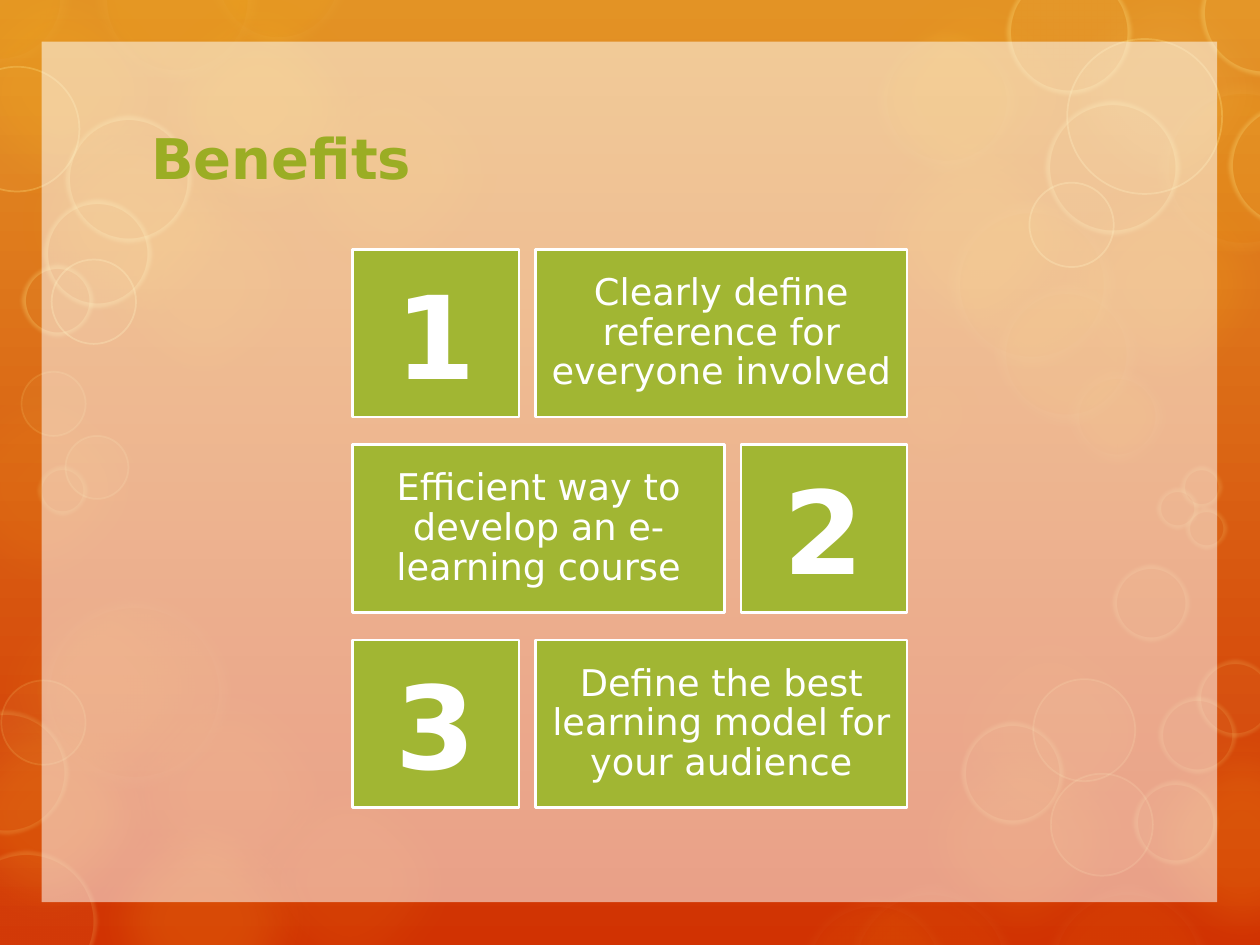
from pptx import Presentation
from pptx.dml.color import RGBColor
from pptx.enum.shapes import MSO_SHAPE
from pptx.enum.text import MSO_ANCHOR, PP_ALIGN
from pptx.oxml.ns import qn
from pptx.util import Inches, Pt
from lxml.etree import SubElement

COLUMNS, ROWS = 10, 7.5
FONT = "DejaVu Sans"
ORANGE = RGBColor(0xE3, 0x93, 0x25)
RED = RGBColor(0xD1, 0x32, 0x02)
GOLD = RGBColor(0xFD, 0xC6, 0x1B)
YELLOW = RGBColor(0xFF, 0xE2, 0x81)
CREAM = RGBColor(0xFE, 0xEB, 0xAE)
WHITE = RGBColor(0xFF, 0xFF, 0xFF)
GREEN = RGBColor(0xA1, 0xB6, 0x33)
TITLE_GREEN = RGBColor(0x9B, 0xAD, 0x24)

# Fill, line colour, line width and soft edge in points
GLOW = (GOLD, None, 0, 25)
PALE_GLOW = (YELLOW, None, 0, 25)
HALO = (GOLD, CREAM, 14, 10)
MIST = (YELLOW, YELLOW, 5, 2.5)
RING = (YELLOW, YELLOW, 1, 0)

# Style, fill opacity, line opacity, then column, row and diameter of each
BUBBLES = [
    (GLOW, 8, 0, [(-0.25, 4.42, 2.09), (0.77, 5.24, 2.09), (1.73, 5.96, 2.09),
                  (-0.7, 2.82, 2.09)]),
    (GLOW, 10, 0, [(0.57, 1.2, 2.09), (2.05, 0.31, 2.09), (6.69, -0.29, 2.09),
                   (7.06, 5.62, 2.09), (6.75, 2.62, 1.33)]),
    (GLOW, 16, 0, [(0.57, 6.27, 2.09), (8.81, 5.62, 2.09), (-0.68, 5.41, 2.09)]),
    (GLOW, 14, 0, [(-0.56, -0.32, 2.09)]),
    (GLOW, 20, 0, [(1.01, -0.18, 2.09)]),
    (GLOW, 15, 0, [(0, 0.72, 2.09), (8.2, 1.2, 2.09), (6.69, 0.86, 2.09)]),
    (GLOW, 5, 0, [(7.29, 4.77, 2.09)]),
    (PALE_GLOW, 10, 0, [(8.2, -0.32, 2.09)]),
    (HALO, 10, 6, [(9.18, 0.65, 1.37), (6.94, 0.23, 1.14), (7.52, 1.59, 1.33),
                   (7.89, 2.24, 1.14), (8.47, 2.91, 0.79), (0.75, -0.66, 1.31),
                   (1.64, -0.75, 1.14), (-0.57, -0.58, 1.14)]),
    (HALO, 6, 4, [(0.3, 4.73, 1.53), (6.32, 7.1, 1.24), (6.7, 7.01, 1.37),
                  (8.28, 7.01, 1.34)]),
    (MIST, 5, 15, [(-0.35, 6.75, 1.12), (-0.44, 5.64, 0.98), (7.63, 5.73, 0.81),
                   (9, 6.2, 0.66), (8.83, 4.48, 0.61), (9.2, 5.53, 0.61),
                   (9.5, 5.24, 0.61), (9.37, 3.7, 0.33), (9.18, 3.87, 0.33),
                   (9.41, 4.03, 0.33), (0.3, 3.7, 0.39)]),
    (MIST, 5, 30, [(0.52, 0.92, 1), (0.35, 1.59, 0.85), (0.17, 2.1, 0.57),
                   (7.99, -0.24, 0.99), (9.53, -0.39, 0.99), (9.75, 0.82, 0.99),
                   (8.3, 0.8, 1.06)]),
    (RING, 5, 15, [(0.01, 5.4, 0.67), (8.34, 6.14, 0.81), (8.2, 5.39, 0.81),
                   (0.17, 2.95, 0.51), (0.52, 3.46, 0.5)]),
    (RING, 5, 30, [(-0.36, 0.53, 0.99), (0.41, 2.06, 0.67), (8.47, 0.31, 1.23),
                   (8.17, 1.45, 0.67)]),
]

BENEFITS = [
    "Clearly define reference for everyone involved",
    "Efficient way to develop an e-learning course",
    "Define the best learning model for your audience",
]
LEFT, TOP, WIDTH = 2.8, 1.98, 4.4
TILE_HEIGHT, ROW_STEP = 1.33, 1.55
NUMBER_WIDTH, TEXT_WIDTH = 1.32, 2.95


def set_opacity(parent, percent):
    color = parent.find(qn("a:solidFill")).find(qn("a:srgbClr"))
    SubElement(color, qn("a:alpha")).set("val", str(percent * 1000))


class Deck:
    """Holds the style and the slide; lengths are columns and rows of one inch."""

    def __init__(self):
        self.prs = Presentation()
        self.prs.slide_width = Inches(COLUMNS)
        self.prs.slide_height = Inches(ROWS)
        self.s = self.prs.slides.add_slide(self.prs.slide_layouts[5])

    def background(self, top, bottom):
        fill = self.s.background.fill
        fill.gradient()
        fill.gradient_angle = 270
        for stop, color in zip(fill.gradient_stops, (top, bottom)):
            stop.color.rgb = color

    def shape(self, kind, box, fill, opacity=100, line=None, width=0):
        sp = self.s.shapes.add_shape(kind, *map(Inches, box))
        sp.shadow.inherit = False
        sp.fill.solid()
        sp.fill.fore_color.rgb = fill
        if opacity < 100:
            set_opacity(sp.element.spPr, opacity)
        if line is None:
            sp.line.fill.background()
        else:
            sp.line.color.rgb = line
            sp.line.width = Pt(width)
        return sp

    def bubble(self, style, opacity, line_opacity, col, row, size):
        fill, line, width, blur = style
        sp = self.shape(MSO_SHAPE.OVAL, (col, row, size, size), fill, opacity,
                        line, width)
        spPr = sp.element.spPr
        if line is not None:
            set_opacity(spPr.find(qn("a:ln")), line_opacity)
        if blur:
            edge = SubElement(spPr.find(qn("a:effectLst")), qn("a:softEdge"))
            edge.set("rad", str(Pt(blur)))

    def add_text(self, tf, text, size, color, align, bold=False):
        tf.word_wrap = True
        tf.vertical_anchor = MSO_ANCHOR.MIDDLE
        p = tf.paragraphs[0]
        p.alignment = align
        r = p.add_run()
        r.text = text
        r.font.name = FONT
        r.font.size = Pt(size)
        r.font.bold = bold
        r.font.color.rgb = color
        return p

    def title(self, text, box):
        sp = self.s.shapes.title
        sp.left, sp.top, sp.width, sp.height = map(Inches, box)
        self.add_text(sp.text_frame, text, 32, TITLE_GREEN, PP_ALIGN.LEFT, True)
        self.s.shapes.element.append(sp.element)  # in front of the panel

    def tile(self, box, text, size, bold=False):
        sp = self.shape(MSO_SHAPE.RECTANGLE, box, GREEN, line=WHITE, width=1.5)
        tf = sp.text_frame
        tf.margin_left = tf.margin_right = Inches(0.09)
        tf.margin_top = tf.margin_bottom = Inches(0.09)
        return self.add_text(tf, text, size, WHITE, PP_ALIGN.CENTER, bold)

    def benefit(self, index, text):
        """Number and text swap sides on every other row."""
        row = TOP + index * ROW_STEP
        number_col, text_col = LEFT, LEFT + WIDTH - TEXT_WIDTH
        if index % 2:
            number_col, text_col = LEFT + WIDTH - NUMBER_WIDTH, LEFT
        p = self.tile((text_col, row, TEXT_WIDTH, TILE_HEIGHT), text, 21)
        p.line_spacing = 0.9
        self.tile((number_col, row, NUMBER_WIDTH, TILE_HEIGHT),
                  str(index + 1), 66, bold=True)


def main():
    deck = Deck()
    deck.background(ORANGE, RED)
    for style, opacity, line_opacity, places in BUBBLES:
        for place in places:
            deck.bubble(style, opacity, line_opacity, *place)
    deck.shape(MSO_SHAPE.RECTANGLE, (0.33, 0.33, 9.33, 6.83), WHITE, 53)
    deck.title("Benefits", (1.1, 0.74, 7.79, 1.01))
    for index, text in enumerate(BENEFITS):
        deck.benefit(index, text)
    deck.prs.save("out.pptx")


if __name__ == "__main__":
    main()
